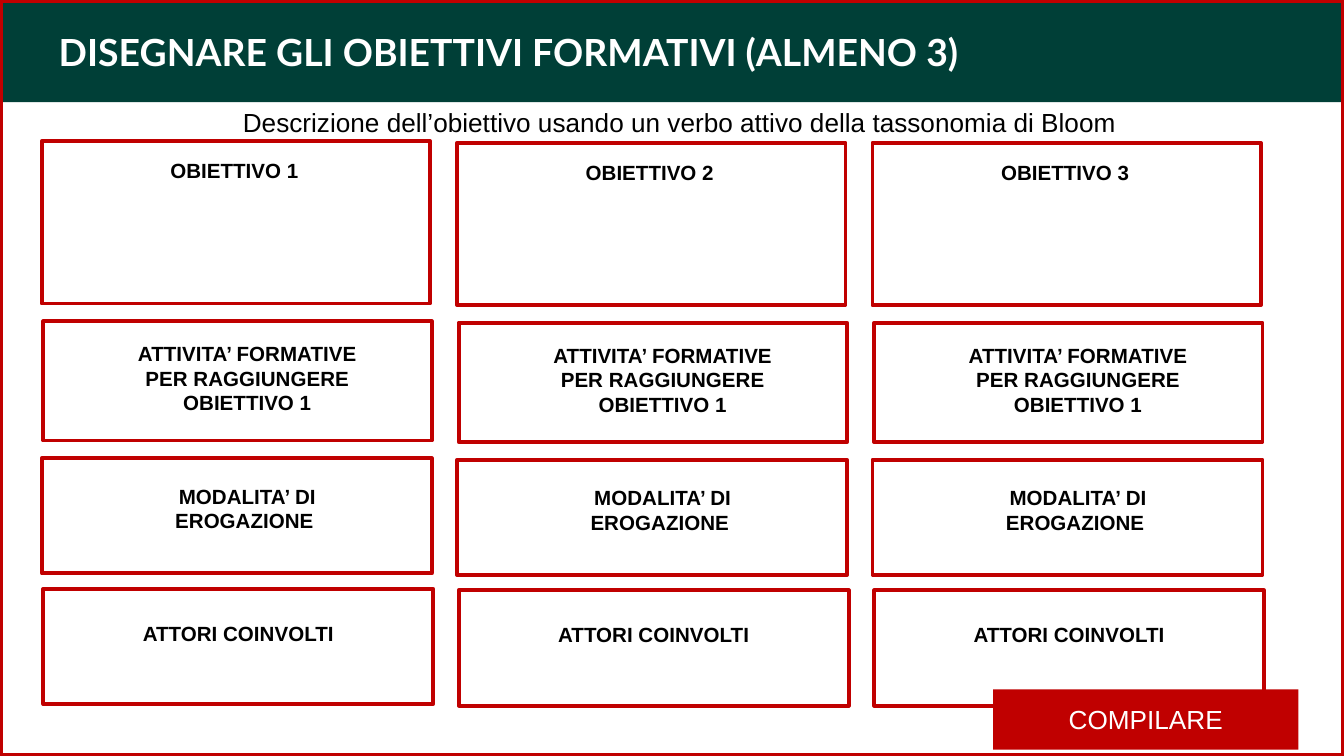
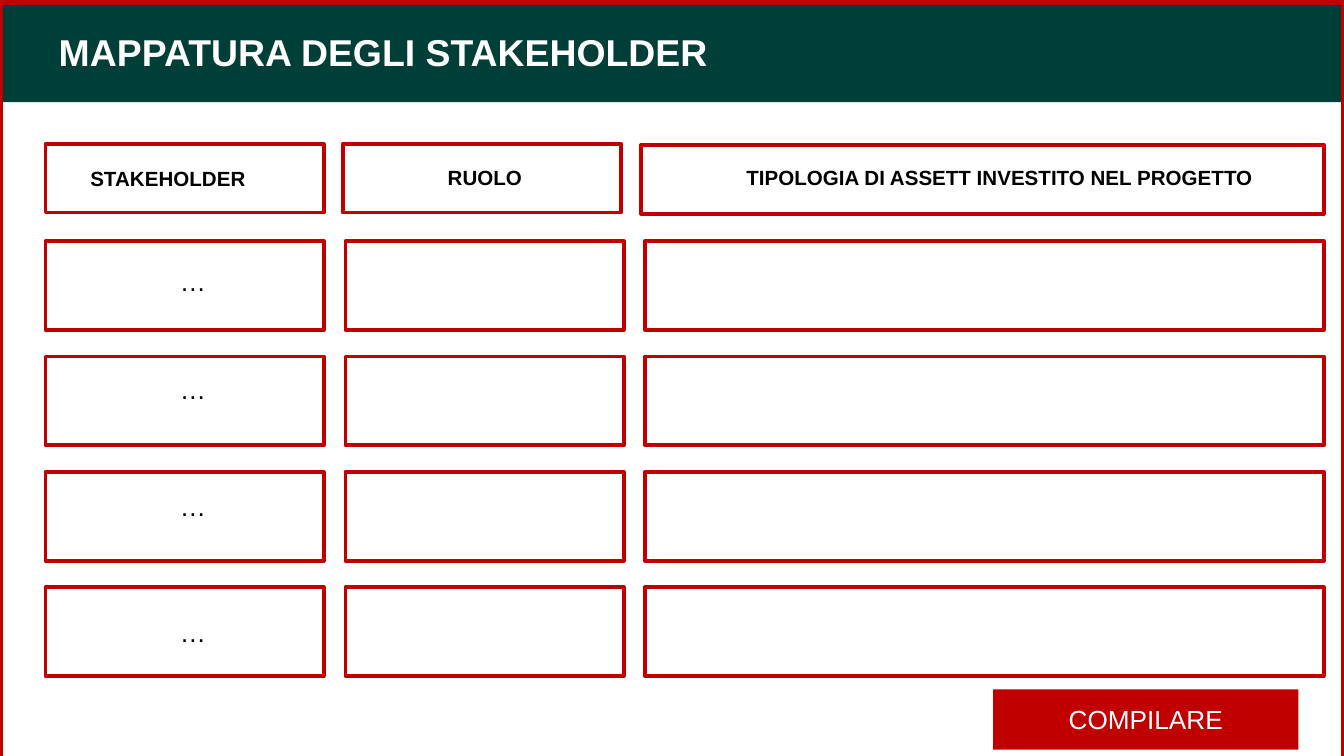
from dataclasses import dataclass

import pptx
import pptx.dml.color
import pptx.enum.shapes
import pptx.enum.text
import pptx.shapes.autoshape
import pptx.slide
import pptx.text.text
import pptx.util
from pptx.util import Cm, Pt

GREEN = pptx.dml.color.RGBColor(0x00, 0x3F, 0x37)
RED = pptx.dml.color.RGBColor(0xC0, 0x00, 0x00)
WHITE = pptx.dml.color.RGBColor(0xFF, 0xFF, 0xFF)
BLACK = pptx.dml.color.RGBColor(0x00, 0x00, 0x00)

ALIGN = pptx.enum.text.PP_ALIGN
ANCHOR = pptx.enum.text.MSO_ANCHOR
AUTO = pptx.enum.text.MSO_AUTO_SIZE
RECT = pptx.enum.shapes.MSO_SHAPE.RECTANGLE

FONT = "Arial"
SLIDE_W, SLIDE_H = 25.4, 14.29
TITLE_ONLY = 5


@dataclass(frozen=True)
class Area:
    """Position and size in centimetres."""
    x: float
    y: float
    w: float
    h: float

    def moved(self, dx: float, dy: float) -> "Area":
        return Area(self.x + dx, self.y + dy, self.w, self.h)

    def lengths(self) -> tuple:
        return Cm(self.x), Cm(self.y), Cm(self.w), Cm(self.h)


@dataclass(frozen=True)
class Field:
    """An outlined box and the label laid over it."""
    label: str
    box: Area
    text: Area
    align: ALIGN = ALIGN.CENTER
    wrap: bool = False


BAND = Area(0, 0, SLIDE_W, 1.93)
TITLE = Area(0.86, 0.18, 23.67, 1.6)
FRAME = Area(0, 0, SLIDE_W, SLIDE_H)
BADGE = Area(18.77, 13.03, 5.77, 1.14)
SUBTITLE = Area(4.34, 1.88, 17.12, 0.86)

# Slide 1: the fields of one objective, repeated in three columns
OBJECTIVES = 3
OBJECTIVE_STEP = 7.85
OBJECTIVE_DROP = 0.03
OBJECTIVE_FIELDS = (
    Field("OBIETTIVO {}", Area(0.79, 2.67, 7.34, 3.07),
          Area(2.97, 2.87, 3.05, 0.74), ALIGN.LEFT),
    Field("ATTIVITA’ FORMATIVE PER RAGGIUNGERE OBIETTIVO 1",
          Area(0.82, 6.07, 7.34, 2.26), Area(2.26, 6.32, 4.83, 1.68), wrap=True),
    Field("MODALITA’ DI EROGAZIONE ", Area(0.79, 8.66, 7.37, 2.18),
          Area(2.26, 9.02, 4.83, 1.19), wrap=True),
    Field("ATTORI COINVOLTI", Area(0.82, 11.13, 7.37, 2.18),
          Area(2.09, 11.61, 4.83, 0.74), wrap=True),
)

# Slide 2: column headings and the empty rows below them
HEADINGS = (
    Field("STAKEHOLDER", Area(0.86, 2.72, 5.26, 1.3), Area(1.42, 3.02, 3.51, 0.74)),
    Field("RUOLO", Area(6.48, 2.72, 5.26, 1.3), Area(8.2, 3, 1.93, 0.74)),
    Field("TIPOLOGIA DI ASSETT INVESTITO NEL PROGETTO",
          Area(12.12, 2.74, 12.9, 1.3), Area(13.79, 3, 10.21, 0.74)),
)
FIRST_ROW = (Area(0.86, 4.56, 5.26, 1.68), Area(6.53, 4.56, 5.26, 1.68),
             Area(12.19, 4.56, 12.83, 1.68))
ROW_STEP = 2.18
DOTS_TOPS = (4.9, 6.93, 9.14, 11.53)


def format_text(tf: pptx.text.text.TextFrame, text: str, size: float,
                color: pptx.dml.color.RGBColor, bold: bool = False,
                align: ALIGN = ALIGN.CENTER, font: str = FONT) -> None:
    tf.text = text
    p = tf.paragraphs[0]
    p.alignment = align
    r = p.runs[0]
    r.font.name, r.font.size, r.font.bold = font, Pt(size), bold
    r.font.color.rgb = color


def add_rect(s: pptx.slide.Slide, area: Area,
             fill: pptx.dml.color.RGBColor | None = None,
             line: float = 0) -> pptx.shapes.autoshape.Shape:
    sp = s.shapes.add_shape(RECT, *area.lengths())
    sp.shadow.inherit = False
    if fill is None:
        sp.fill.background()
    else:
        sp.fill.solid()
        sp.fill.fore_color.rgb = fill
    if line:
        sp.line.color.rgb = RED
        sp.line.width = Pt(line)
    else:
        sp.line.fill.background()
    return sp


def add_label(s: pptx.slide.Slide, area: Area, text: str, size: float = 11,
              bold: bool = True, align: ALIGN = ALIGN.CENTER,
              wrap: bool = False) -> None:
    tf = s.shapes.add_textbox(*area.lengths()).text_frame
    tf.word_wrap = wrap
    tf.auto_size = AUTO.SHAPE_TO_FIT_TEXT
    format_text(tf, text, size, BLACK, bold, align)


def add_field(s: pptx.slide.Slide, field: Field, dx: float = 0, dy: float = 0,
              number: int = 1) -> None:
    add_rect(s, field.box.moved(dx, dy), line=2)
    add_label(s, field.text.moved(dx, dy), field.label.format(number),
              align=field.align, wrap=field.wrap)


def add_slide(prs, title: str, font: str = FONT,
              frame_drop: float = 0) -> pptx.slide.Slide:
    """Slide with the green band, its title and the red frame."""
    s = prs.slides.add_slide(prs.slide_layouts[TITLE_ONLY])
    band = add_rect(s, BAND, fill=GREEN)
    sp = s.shapes.title
    band.element.addnext(sp.element)
    sp.left, sp.top, sp.width, sp.height = TITLE.lengths()
    tf = sp.text_frame
    tf.margin_left = tf.margin_right = tf.margin_top = tf.margin_bottom = Cm(0.25)
    tf.vertical_anchor = ANCHOR.MIDDLE
    tf.word_wrap = True
    tf.auto_size = AUTO.NONE
    format_text(tf, title, 20, WHITE, True, ALIGN.LEFT, font)
    add_rect(s, FRAME.moved(0, frame_drop), line=3)
    return s


def add_badge(s: pptx.slide.Slide) -> None:
    tf = add_rect(s, BADGE, fill=RED).text_frame
    tf.vertical_anchor = ANCHOR.MIDDLE
    format_text(tf, "COMPILARE", 14, WHITE)


def build_objectives(prs) -> None:
    s = add_slide(prs, "DISEGNARE GLI OBIETTIVI FORMATIVI (ALMENO 3)", "Lato")
    add_label(s, SUBTITLE,
              "Descrizione dell’obiettivo usando un verbo attivo della tassonomia di Bloom",
              14, False, ALIGN.LEFT)
    for col in range(OBJECTIVES):
        drop = OBJECTIVE_DROP if col else 0
        for field in OBJECTIVE_FIELDS:
            add_field(s, field, col * OBJECTIVE_STEP, drop, col + 1)
    add_badge(s)


def build_stakeholders(prs) -> None:
    s = add_slide(prs, "MAPPATURA DEGLI STAKEHOLDER", frame_drop=0.05)
    for heading in HEADINGS:
        add_field(s, heading)
    for row, dots_top in enumerate(DOTS_TOPS):
        for cell in FIRST_ROW:
            add_rect(s, cell.moved(0, row * ROW_STEP), line=2)
        add_label(s, Area(3.15, dots_top, 1.02, 0.86), "…", 14, False, ALIGN.LEFT)
    add_badge(s)


def main() -> None:
    prs = pptx.Presentation()
    prs.slide_width, prs.slide_height = Cm(SLIDE_W), Cm(SLIDE_H)
    build_objectives(prs)
    build_stakeholders(prs)
    prs.save("out.pptx")


if __name__ == "__main__":
    main()
